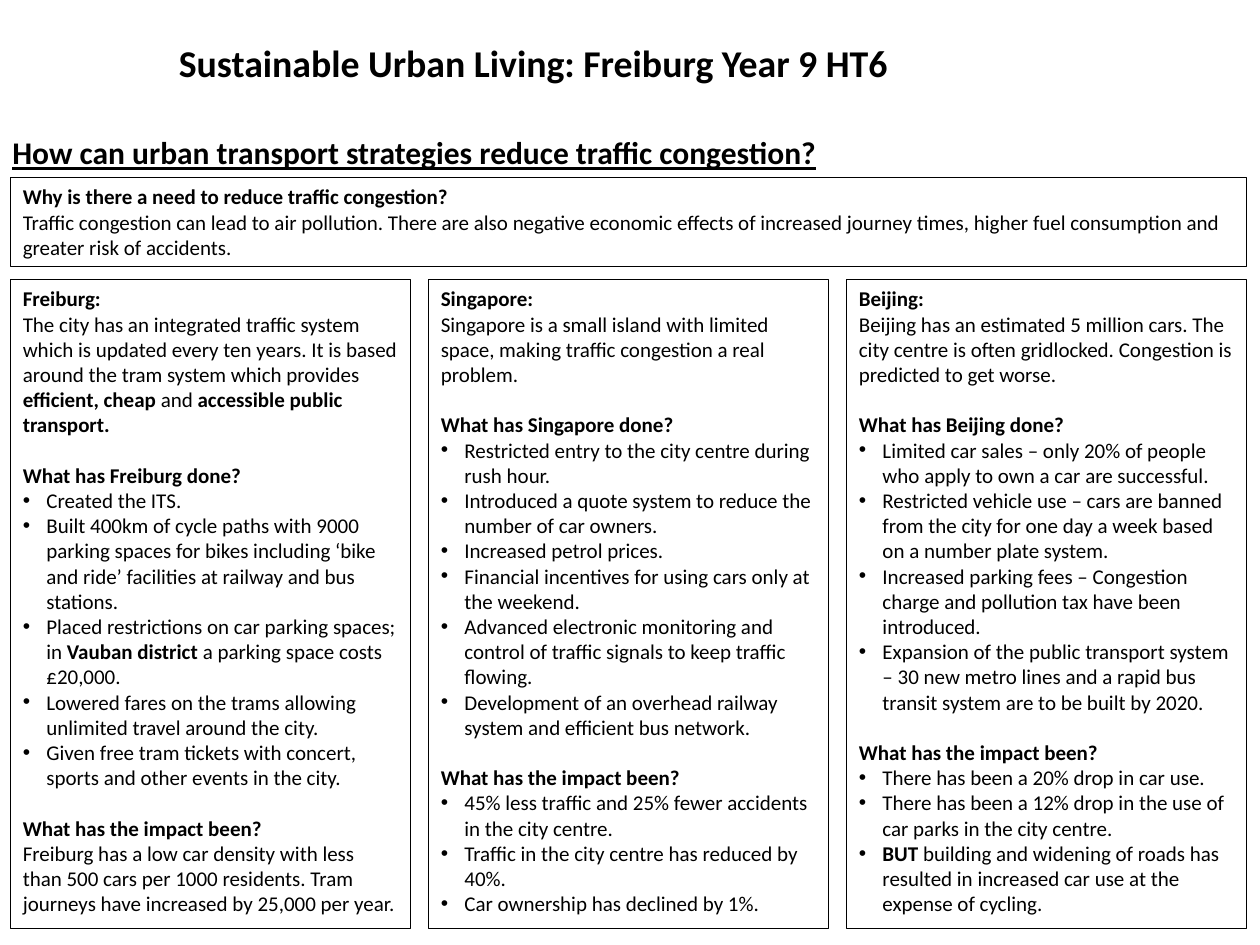
from lxml.etree import SubElement
from pptx import Presentation
from pptx.dml.color import RGBColor
from pptx.enum.text import MSO_ANCHOR, MSO_AUTO_SIZE, PP_ALIGN
from pptx.oxml.ns import qn
from pptx.util import Pt

COLOURS = {"ink": "000000", "paper": "FFFFFF"}
FONT = "Calibri"
LEFT, COLUMN_WIDTH, GAP = 5.8, 228.9, 10
COLUMN_TOP, COLUMN_HEIGHT = 159.8, 370.8
SECTION_GAP = 14.4
BULLET_INDENT = 13.5

# Text between ** marks is bold; lines that start with "• " are list items.
INTRO = [[
    "**Why is there a need to reduce traffic congestion?**",
    "Traffic congestion can lead to air pollution. There are also negative economic effects of "
    "increased journey times, higher fuel consumption and greater risk of accidents.",
]]
CITIES = [
    [
        ["**Freiburg:**",
         "The city has an integrated traffic system which is updated every ten years. It is based "
         "around the tram system which provides **efficient, cheap **and **accessible public "
         "transport.**"],
        ["**What has Freiburg done?**",
         "• Created the ITS.",
         "• Built 400km of cycle paths with 9000 parking spaces for bikes including ‘bike and "
         "ride’ facilities at railway and bus stations.",
         "• Placed restrictions on car parking spaces; in **Vauban district** a parking space "
         "costs £20,000.",
         "• Lowered fares on the trams allowing unlimited travel around the city.",
         "• Given free tram tickets with concert, sports and other events in the city."],
        ["**What has the impact been?**",
         "Freiburg has a low car density with less than 500 cars per 1000 residents. Tram "
         "journeys have increased by 25,000 per year."],
    ],
    [
        ["**Singapore:**",
         "Singapore is a small island with limited space, making traffic congestion a real "
         "problem."],
        ["**What has Singapore done?**",
         "• Restricted entry to the city centre during rush hour.",
         "• Introduced a quote system to reduce the number of car owners.",
         "• Increased petrol prices.",
         "• Financial incentives for using cars only at the weekend.",
         "• Advanced electronic monitoring and control of traffic signals to keep traffic "
         "flowing.",
         "• Development of an overhead railway system and efficient bus network."],
        ["**What has the impact been?**",
         "• 45% less traffic and 25% fewer accidents in the city centre.",
         "• Traffic in the city centre has reduced by 40%.",
         "• Car ownership has declined by 1%."],
    ],
    [
        ["**Beijing:**",
         "Beijing has an estimated 5 million cars. The city centre is often gridlocked. "
         "Congestion is predicted to get worse."],
        ["**What has Beijing done?**",
         "• Limited car sales – only 20% of people who apply to own a car are successful.",
         "• Restricted vehicle use – cars are banned from the city for one day a week based on a "
         "number plate system.",
         "• Increased parking fees – Congestion charge and pollution tax have been introduced.",
         "• Expansion of the public transport system – 30 new metro lines and a rapid bus transit "
         "system are to be built by 2020."],
        ["**What has the impact been?**",
         "• There has been a 20% drop in car use.",
         "• There has been a 12% drop in the use of car parks in the city centre.",
         "• **BUT **building and widening of roads has resulted in increased car use at the "
         "expense of cycling."],
    ],
]


def place(box, left, top, width, height):
    box.left, box.top, box.width, box.height = Pt(left), Pt(top), Pt(width), Pt(height)


def write(para, text, size=12, underline=None, space_before=0, line_spacing=1.0):
    """Fill a paragraph, with ** marks switching bold on and off."""
    para.alignment = PP_ALIGN.LEFT
    para.space_before = Pt(space_before)
    para.line_spacing = line_spacing
    for index, part in enumerate(text.split("**")):
        if part:
            span = para.add_run()
            span.text = part
            span.font.name = FONT
            span.font.size = Pt(size)
            span.font.bold = index % 2 == 1
            span.font.underline = underline
            span.font.color.rgb = RGBColor.from_string(COLOURS["ink"])


def set_bullet(para, bulleted):
    properties = para._p.get_or_add_pPr()
    indent = Pt(BULLET_INDENT) if bulleted else 0
    properties.set("marL", str(indent))
    properties.set("indent", str(-indent))
    if bulleted:
        SubElement(properties, qn("a:buFont"), typeface="Arial")
        SubElement(properties, qn("a:buChar"), char="•")
    else:
        SubElement(properties, qn("a:buNone"))


def prepare_frame(box, anchor, wrap=True):
    frame = box.text_frame
    frame.auto_size = MSO_AUTO_SIZE.NONE
    frame.word_wrap = wrap
    frame.vertical_anchor = anchor
    return frame


def fill_panel(box, sections, left, top, width, height):
    """Outline a body placeholder and set its sections apart by paragraph spacing."""
    place(box, left, top, width, height)
    box.line.color.rgb = RGBColor.from_string(COLOURS["ink"])
    box.line.width = Pt(0.75)
    frame = prepare_frame(box, MSO_ANCHOR.TOP)
    para = frame.paragraphs[0]
    for section_index, section in enumerate(sections):
        for line_index, text in enumerate(section):
            if section_index or line_index:
                para = frame.add_paragraph()
            set_bullet(para, text.startswith("• "))
            opens_section = section_index > 0 and line_index == 0
            write(para, text.removeprefix("• "),
                  space_before=SECTION_GAP if opens_section else 0)


def add_title(page):
    box = page.shapes.title
    place(box, 95, 21.6, 589, 31.7)
    frame = prepare_frame(box, MSO_ANCHOR.MIDDLE)
    write(frame.paragraphs[0], "**Sustainable Urban Living: Freiburg Year 9 HT6**",
          size=21.6, line_spacing=0.9)


def add_question(page):
    box = page.shapes.add_textbox(Pt(0), Pt(72.7), Pt(478), Pt(29))
    frame = prepare_frame(box, MSO_ANCHOR.TOP, wrap=False)
    write(frame.paragraphs[0],
          "**How can urban transport strategies reduce traffic congestion?**",
          size=18, underline=True)


def main():
    deck = Presentation()
    deck.slide_width, deck.slide_height = Pt(720), Pt(540)
    page = deck.slides.add_slide(deck.slide_layouts.get_by_name("Comparison"))
    page.background.fill.solid()
    page.background.fill.fore_color.rgb = RGBColor.from_string(COLOURS["paper"])

    add_title(page)
    add_question(page)
    intro, *columns = [box for box in page.placeholders if box.placeholder_format.idx > 0]
    fill_panel(intro, INTRO, LEFT, 101.5, 3 * COLUMN_WIDTH + 2 * GAP, 51)
    for index, (box, sections) in enumerate(zip(columns, CITIES)):
        left = LEFT + index * (COLUMN_WIDTH + GAP)
        fill_panel(box, sections, left, COLUMN_TOP, COLUMN_WIDTH, COLUMN_HEIGHT)
    deck.save("out.pptx")


if __name__ == "__main__":
    main()
